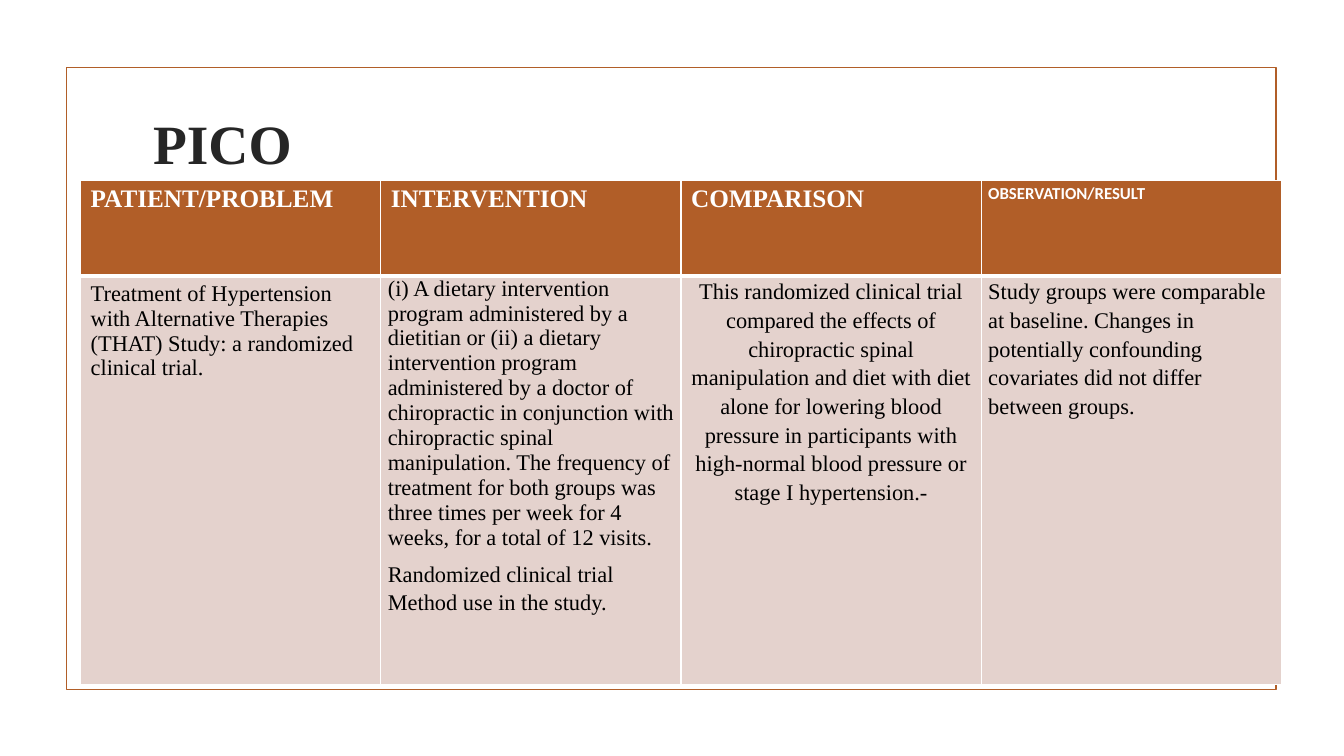
from lxml import etree
from pptx import Presentation
from pptx.dml.color import RGBColor
from pptx.enum.shapes import MSO_SHAPE
from pptx.enum.text import MSO_ANCHOR, PP_ALIGN
from pptx.oxml.ns import qn
from pptx.util import Inches, Pt

RECTANGLE = MSO_SHAPE.RECTANGLE
MIDDLE = MSO_ANCHOR.MIDDLE
LEFT, CENTER = PP_ALIGN.LEFT, PP_ALIGN.CENTER

RUST = RGBColor(0xB1, 0x5E, 0x28)
BLUSH = RGBColor(0xE4, 0xD2, 0xCD)
CHARCOAL = RGBColor(0x26, 0x26, 0x26)
BLACK = RGBColor(0, 0, 0)
WHITE = RGBColor(0xFF, 0xFF, 0xFF)
SERIF, SANS = "Times New Roman", "Calibri"


def write(frame, text, size=16, font=SERIF, color=BLACK, bold=False,
          align=LEFT, spacing=1.0, after=0):
    """Fill the first paragraph of the frame, or add one after it."""
    para = frame.paragraphs[0] if not frame.text else frame.add_paragraph()
    para.alignment = align
    para.line_spacing = spacing
    para.space_after = Pt(after)
    span = para.add_run()
    span.text = text
    span.font.size = Pt(size)
    span.font.name = font
    span.font.bold = bold
    span.font.color.rgb = color


def style_cell(cell, fill, bottom_width, tight):
    """Set fill, white borders and, when tight, narrow margins."""
    cell.fill.solid()
    cell.fill.fore_color.rgb = fill
    properties = cell._tc.get_or_add_tcPr()
    widths = {"a:lnL": 1, "a:lnR": 1, "a:lnT": 1, "a:lnB": bottom_width}
    for index, (side, width) in enumerate(widths.items()):
        border = etree.Element(qn(side), w=str(Pt(width)))
        paint = etree.SubElement(border, qn("a:solidFill"))
        etree.SubElement(paint, qn("a:srgbClr"), val=str(WHITE))
        properties.insert(index, border)
    if tight:
        cell.margin_left = cell.margin_right = Inches(0.07)
        cell.margin_top = cell.margin_bottom = 0


deck = Presentation()
deck.slide_width, deck.slide_height = Inches(13.33), Inches(7.5)
page = deck.slides.add_slide(deck.slide_layouts[6])

border_box = page.shapes.add_shape(
    RECTANGLE, Inches(0.66), Inches(0.67), Inches(12), Inches(6.17))
border_box.shadow.inherit = False
border_box.fill.background()
border_box.line.color.rgb = RUST
border_box.line.width = Pt(1.25)

# Each cell: tight margins, then its paragraphs with their format
HEADING = {"size": 18, "color": WHITE, "bold": True}
LOOSE = {"spacing": 1.15}
headings = [
    (False, [("PATIENT/PROBLEM", HEADING)]),
    (False, [("INTERVENTION", HEADING)]),
    (False, [("COMPARISON", HEADING)]),
    (True, [("OBSERVATION/RESULT",
             {**HEADING, **LOOSE, "size": 12, "font": SANS})]),
]
details = [
    (False, [("Treatment of Hypertension with Alternative Therapies (THAT) "
              "Study: a randomized clinical trial.", {})]),
    (True, [("(i) A dietary intervention program administered by a dietitian "
             "or (ii) a dietary intervention program administered by a doctor "
             "of chiropractic in conjunction with chiropractic spinal "
             "manipulation. The frequency of treatment for both groups was "
             "three times per week for 4 weeks, for a total of 12 visits.",
             {"after": 6}),
            ("Randomized clinical trial Method use in the study.", LOOSE)]),
    (True, [("This randomized clinical trial compared the effects of "
             "chiropractic spinal manipulation and diet with diet alone for "
             "lowering blood pressure in participants with high-normal blood "
             "pressure or stage I hypertension.-",
             {**LOOSE, "align": CENTER})]),
    (True, [("Study groups were comparable at baseline. Changes in "
             "potentially confounding covariates did not differ between "
             "groups.", LOOSE)]),
]
# Height in inches, fill, bottom border in points, cells
rows = [(0.95, RUST, 3, headings), (4.05, BLUSH, 1, details)]

table = page.shapes.add_table(
    len(rows), len(headings), Inches(0.8), Inches(1.79),
    Inches(11.91), Inches(5)).table
for row, (height, fill, bottom_width, cells) in enumerate(rows):
    table.rows[row].height = Inches(height)
    for column, (tight, paragraphs) in enumerate(cells):
        cell = table.cell(row, column)
        style_cell(cell, fill, bottom_width, tight)
        for text, text_format in paragraphs:
            write(cell.text_frame, text, **text_format)

title_box = page.shapes.add_textbox(
    Inches(1.42), Inches(1.07), Inches(10.5), Inches(0.69))
title_box.text_frame.word_wrap = True
title_box.text_frame.vertical_anchor = MIDDLE
write(title_box.text_frame, "PICO", size=39.6, color=CHARCOAL, bold=True)

deck.save("out.pptx")
